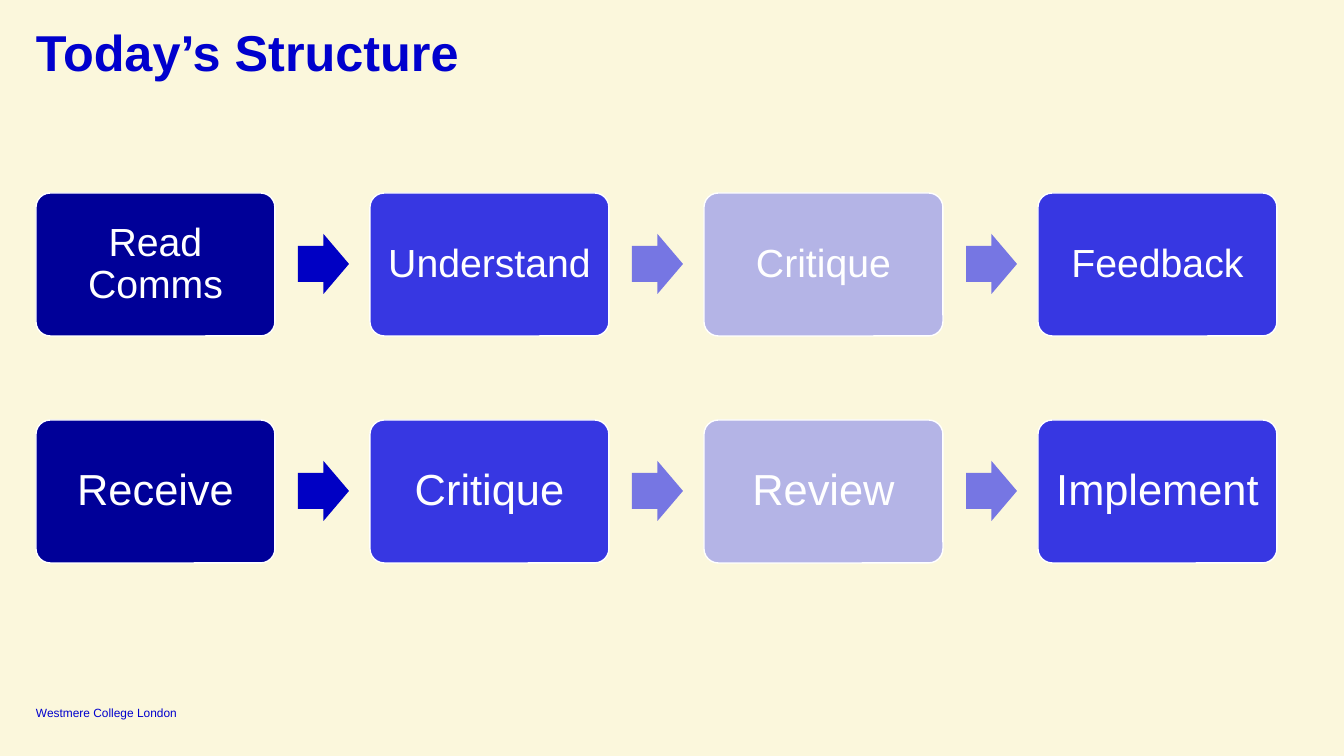
from dataclasses import dataclass

from pptx import Presentation
from pptx.dml.color import RGBColor
from pptx.enum.shapes import MSO_SHAPE
from pptx.enum.text import MSO_ANCHOR, MSO_AUTO_SIZE, PP_ALIGN
from pptx.util import Emu, Pt

ROUND_RECT = MSO_SHAPE.ROUNDED_RECTANGLE
RIGHT_ARROW = MSO_SHAPE.RIGHT_ARROW
TOP, MIDDLE, BOTTOM = MSO_ANCHOR.TOP, MSO_ANCHOR.MIDDLE, MSO_ANCHOR.BOTTOM
LEFT, CENTER = PP_ALIGN.LEFT, PP_ALIGN.CENTER
NO_AUTOFIT = MSO_AUTO_SIZE.NONE

SLIDE_W, SLIDE_H = 1344, 756
EMU_PER_PX = 12192000 / SLIDE_W


@dataclass(frozen=True)
class Theme:
    font: str = "Arial"
    background: str = "FBF7DC"
    ink: str = "0000CD"
    white: str = "FFFFFF"
    steps: tuple = ("000098", "3737E2", "B4B4E6", "3737E2")
    arrows: tuple = ("0000C4", "7676E3", "7676E3")
    title_size: float = 36
    footer_size: float = 8.5


THEME = Theme()


def px(n):
    return Emu(round(n * EMU_PER_PX))


def rgb(color):
    return RGBColor.from_string(color)


def place(sp, box):
    sp.left, sp.top, sp.width, sp.height = map(px, box)


def set_text(sp, text, size, color, anchor, align=LEFT, inset=0,
             spacing=None, bold=False):
    tf = sp.text_frame
    tf.word_wrap = True
    tf.auto_size = NO_AUTOFIT
    tf.vertical_anchor = anchor
    tf.margin_left = tf.margin_top = px(inset)
    tf.margin_right = tf.margin_bottom = px(inset)
    p = tf.paragraphs[0]
    p.text = text
    p.alignment = align
    p.line_spacing = spacing
    p.font.name = THEME.font
    p.font.size = Pt(size)
    p.font.bold = bold
    p.font.color.rgb = rgb(color)


def add_filled(s, kind, box, color):
    sp = s.shapes.add_shape(kind, *map(px, box))
    sp.shadow.inherit = False
    sp.fill.solid()
    sp.fill.fore_color.rgb = rgb(color)
    sp.line.fill.background()
    return sp


def add_title(s, text, box):
    sp = s.shapes.title
    place(sp, box)
    set_text(sp, text, THEME.title_size, THEME.ink, TOP,
             spacing=0.9, bold=True)


def add_footer(s, text, box):
    sp = s.shapes.add_textbox(*map(px, box))
    set_text(sp, text, THEME.footer_size, THEME.ink, BOTTOM)


def add_process(s, labels, size, box):
    """Spread the steps evenly over the box, with an arrow in each gap."""
    x, y, w, h = box
    step_w, arrow_w, arrow_h = 239, 51, 60
    pitch = (w - step_w) // (len(labels) - 1)
    for i, label in enumerate(labels):
        left = x + i * pitch
        sp = add_filled(s, ROUND_RECT, (left, y, step_w, h), THEME.steps[i])
        sp.adjustments[0] = 0.1
        sp.line.color.rgb = rgb(THEME.white)
        sp.line.width = Pt(1)
        set_text(sp, label, size, THEME.white, MIDDLE, CENTER,
                 inset=12, spacing=0.9)
        if i < len(labels) - 1:
            arrow_x = left + (step_w + pitch - arrow_w) // 2 + 1
            arrow_y = y + (h - arrow_h) // 2
            arrow = add_filled(s, RIGHT_ARROW,
                               (arrow_x, arrow_y, arrow_w, arrow_h),
                               THEME.arrows[i])
            arrow.adjustments[0] = 0.6
            arrow.adjustments[1] = 0.5


def main():
    prs = Presentation()
    prs.slide_width, prs.slide_height = px(SLIDE_W), px(SLIDE_H)
    s = prs.slides.add_slide(prs.slide_layouts[5])
    s.background.fill.solid()
    s.background.fill.fore_color.rgb = rgb(THEME.background)

    add_title(s, "Today’s Structure", (36, 28, 1272, 41))
    add_process(s, ["Read Comms", "Understand", "Critique", "Feedback"], 28,
                (36, 193, 1241, 143))
    add_process(s, ["Receive", "Critique", "Review", "Implement"], 31,
                (36, 420, 1241, 143))
    add_footer(s, "Westmere College London", (36, 705, 156, 15))
    prs.save("out.pptx")


if __name__ == "__main__":
    main()
